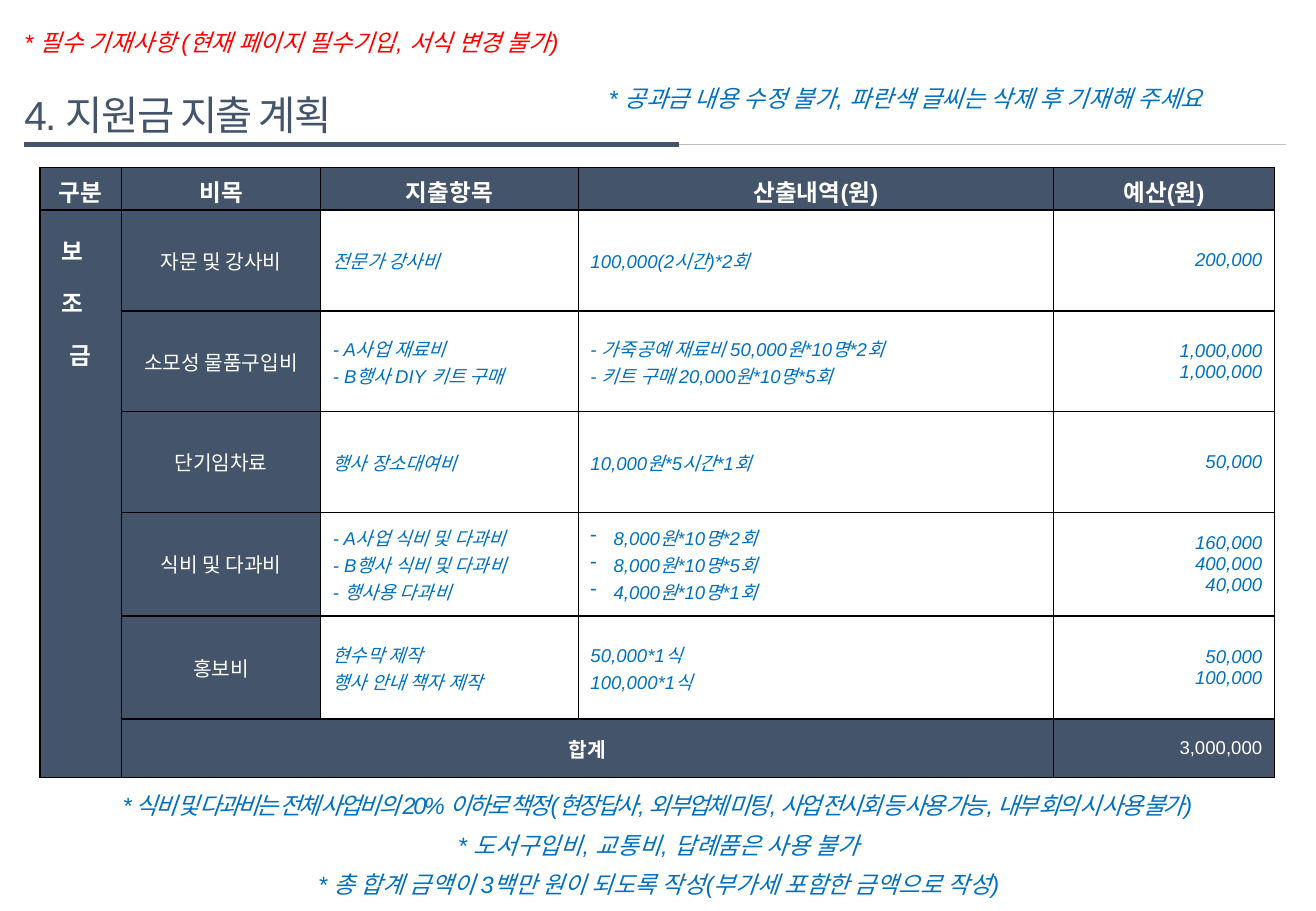
from dataclasses import dataclass

from lxml import etree
from pptx import Presentation
from pptx.dml.color import RGBColor
from pptx.enum.shapes import MSO_CONNECTOR
from pptx.enum.text import MSO_ANCHOR, MSO_AUTO_SIZE, PP_ALIGN
from pptx.oxml.ns import qn
from pptx.util import Pt

PX = 9144  # one px is a hundredth of an inch

NAVY = RGBColor(0x44, 0x54, 0x6A)
BLUE = RGBColor(0x00, 0x70, 0xC0)
RED = RGBColor(0xFF, 0x00, 0x00)
GRAY = RGBColor(0xBF, 0xBF, 0xBF)
WHITE = RGBColor(0xFF, 0xFF, 0xFF)

LEFT, CENTER, RIGHT = PP_ALIGN.LEFT, PP_ALIGN.CENTER, PP_ALIGN.RIGHT
TOP, MIDDLE, BOTTOM = MSO_ANCHOR.TOP, MSO_ANCHOR.MIDDLE, MSO_ANCHOR.BOTTOM
GROW = MSO_AUTO_SIZE.SHAPE_TO_FIT_TEXT
STRAIGHT = MSO_CONNECTOR.STRAIGHT


@dataclass(frozen=True)
class TextStyle:
    size: int
    color: RGBColor
    bold: bool = False
    italic: bool = False
    tracking: float = 0


@dataclass(frozen=True)
class Note:
    text: str
    left: int
    top: int
    width: int
    style: TextStyle
    align: PP_ALIGN = LEFT


@dataclass(frozen=True)
class Rule:
    left: int
    right: int
    color: RGBColor
    weight: float


@dataclass(frozen=True)
class Expense:
    category: str
    items: str
    formulas: str
    amounts: str
    bulleted: bool = False


TITLE = TextStyle(24, NAVY, tracking=-1)
REQUIRED = TextStyle(14, RED, italic=True)
HINT = TextStyle(14, BLUE, italic=True)
TIGHT_HINT = TextStyle(14, BLUE, italic=True, tracking=-1.5)
HEADER = TextStyle(14, WHITE, bold=True)
SPREAD_HEADER = TextStyle(14, WHITE, bold=True, tracking=10)
CATEGORY = TextStyle(12, WHITE)
TOTAL_LABEL = TextStyle(12, WHITE, bold=True)
TOTAL_VALUE = TextStyle(11, WHITE)
EXAMPLE = TextStyle(11, BLUE, italic=True)

NOTES = [
    Note("* 필수 기재사항 (현재 페이지 필수기입, 서식 변경 불가)", 10, 18, 512, REQUIRED),
    Note("* 공과금 내용 수정 불가, 파란색 글씨는 삭제 후 기재해 주세요", 491, 64, 573, HINT),
    Note("* 식비 및 다과비는 전체 사업비의 20% 이하로 책정(현장답사, 외부업체 미팅, "
         "사업 전시회 등 사용 가능, 내부 회의 시 사용 불가)", 45, 646, 992, TIGHT_HINT, CENTER),
    Note("* 도서구입비, 교통비, 답례품은 사용 불가", 349, 679, 386, HINT, CENTER),
    Note("* 총 합계 금액이 3백만 원이 되도록 작성(부가세 포함한 금액으로 작성)",
         217, 711, 650, HINT, CENTER),
]
RULES = [Rule(20, 1058, GRAY, 0.5), Rule(20, 559, NAVY, 3.5)]

COLUMNS = [67, 164, 212, 391, 182]
ROWS = [35, 83, 83, 83, 85, 85, 48]
HEADINGS = ["구분", "비목", "지출항목", "산출내역(원)", "예산(원)"]
EXPENSES = [
    Expense("자문 및 강사비", "전문가 강사비", "100,000(2시간)*2회", "200,000"),
    Expense("소모성 물품구입비", "- A사업 재료비\n- B행사 DIY 키트 구매",
            "- 가죽공예 재료비 50,000원*10명*2회\n- 키트 구매 20,000원*10명*5회",
            "1,000,000\n1,000,000"),
    Expense("단기임차료", "행사 장소대여비", "10,000원*5시간*1회", "50,000"),
    Expense("식비 및 다과비",
            "- A사업 식비 및 다과비\n- B행사 식비 및 다과비\n- 행사용 다과비",
            "8,000원*10명*2회\n8,000원*10명*5회\n4,000원*10명*1회",
            "160,000\n400,000\n40,000", bulleted=True),
    Expense("홍보비", "현수막 제작\n행사 안내 책자 제작", "50,000*1식\n100,000*1식",
            "50,000\n100,000"),
]


def write(frame, text: str, style: TextStyle, align: PP_ALIGN) -> None:
    frame.text = text
    for para in frame.paragraphs:
        para.alignment = align
        for span in para.runs:
            font = span.font
            font.name = "Arial"
            font.size = Pt(style.size)
            font.bold = style.bold
            font.italic = style.italic
            font.color.rgb = style.color
            if style.tracking:
                font._element.set("spc", str(int(style.tracking * 100)))


def add_note(page, note: Note) -> None:
    box = page.shapes.add_textbox(note.left * PX, note.top * PX, note.width * PX, 34 * PX)
    write(box.text_frame, note.text, note.style, note.align)
    box.text_frame.word_wrap = False
    box.text_frame.auto_size = GROW


def add_title(page) -> None:
    frame = page.shapes.add_textbox(20 * PX, 71 * PX, 637 * PX, 47 * PX).text_frame
    write(frame, "4. 지원금 지출 계획", TITLE, LEFT)
    frame.word_wrap = False
    frame.vertical_anchor = BOTTOM
    frame.margin_left = frame.margin_top = frame.margin_right = 0
    frame.margin_bottom = 4 * PX


def add_rule(page, rule: Rule) -> None:
    line = page.shapes.add_connector(
        STRAIGHT, rule.left * PX, 119 * PX, rule.right * PX, 119 * PX)
    line.line.color.rgb = rule.color
    line.line.width = Pt(rule.weight)
    etree.SubElement(line._element.spPr, qn("a:effectLst"))


def add_borders(cell) -> None:
    properties = cell._tc.get_or_add_tcPr()
    for side in ("lnL", "lnR", "lnT", "lnB"):
        border = etree.SubElement(properties, qn(f"a:{side}"), w=str(Pt(1)))
        fill = etree.SubElement(border, qn("a:solidFill"))
        etree.SubElement(fill, qn("a:srgbClr"), val="000000")


def fill_cell(cell, text: str, style: TextStyle, align: PP_ALIGN) -> None:
    """Write a cell; white lettering gets a navy ground."""
    write(cell.text_frame, text, style, align)
    cell.vertical_anchor = MIDDLE
    if style.color == WHITE:
        cell.fill.solid()
        cell.fill.fore_color.rgb = NAVY


def add_dashes(cell) -> None:
    for para in cell.text_frame.paragraphs:
        properties = para._p.get_or_add_pPr()
        properties.set("marL", str(19 * PX))
        properties.set("indent", str(-19 * PX))
        etree.SubElement(properties, qn("a:buChar"), char="-")


def add_budget(page) -> None:
    table = page.shapes.add_table(len(ROWS), len(COLUMNS), 33 * PX, 138 * PX,
                                  sum(COLUMNS) * PX, sum(ROWS) * PX).table
    table.first_row = table.horz_banding = False
    for column, width in zip(table.columns, COLUMNS):
        column.width = width * PX
    for row, height in zip(table.rows, ROWS):
        row.height = height * PX
    for cell in table.iter_cells():
        add_borders(cell)
        cell.fill.background()

    for index, heading in enumerate(HEADINGS):
        fill_cell(table.cell(0, index), heading, HEADER, CENTER)
    for index, expense in enumerate(EXPENSES, start=1):
        fill_cell(table.cell(index, 1), expense.category, CATEGORY, CENTER)
        fill_cell(table.cell(index, 2), expense.items, EXAMPLE, LEFT)
        fill_cell(table.cell(index, 3), expense.formulas, EXAMPLE, LEFT)
        fill_cell(table.cell(index, 4), expense.amounts, EXAMPLE, RIGHT)
        if expense.bulleted:
            add_dashes(table.cell(index, 3))

    last = len(ROWS) - 1
    subsidy = table.cell(1, 0)
    subsidy.merge(table.cell(last, 0))
    fill_cell(subsidy, "보 조 금", SPREAD_HEADER, CENTER)
    subsidy.vertical_anchor = TOP
    subsidy.text_frame.paragraphs[0].line_spacing = 1.5
    subsidy._tc.get_or_add_tcPr().set("vert", "eaVert")

    total = table.cell(last, 1)
    total.merge(table.cell(last, 3))
    fill_cell(total, "합계", TOTAL_LABEL, CENTER)
    fill_cell(table.cell(last, 4), "3,000,000", TOTAL_VALUE, RIGHT)


def main() -> None:
    deck = Presentation()
    deck.slide_width, deck.slide_height = 1083 * PX, 750 * PX
    page = deck.slides.add_slide(deck.slide_layouts[6])
    add_title(page)
    for rule in RULES:
        add_rule(page, rule)
    for note in NOTES:
        add_note(page, note)
    add_budget(page)
    deck.save("out.pptx")


if __name__ == "__main__":
    main()
